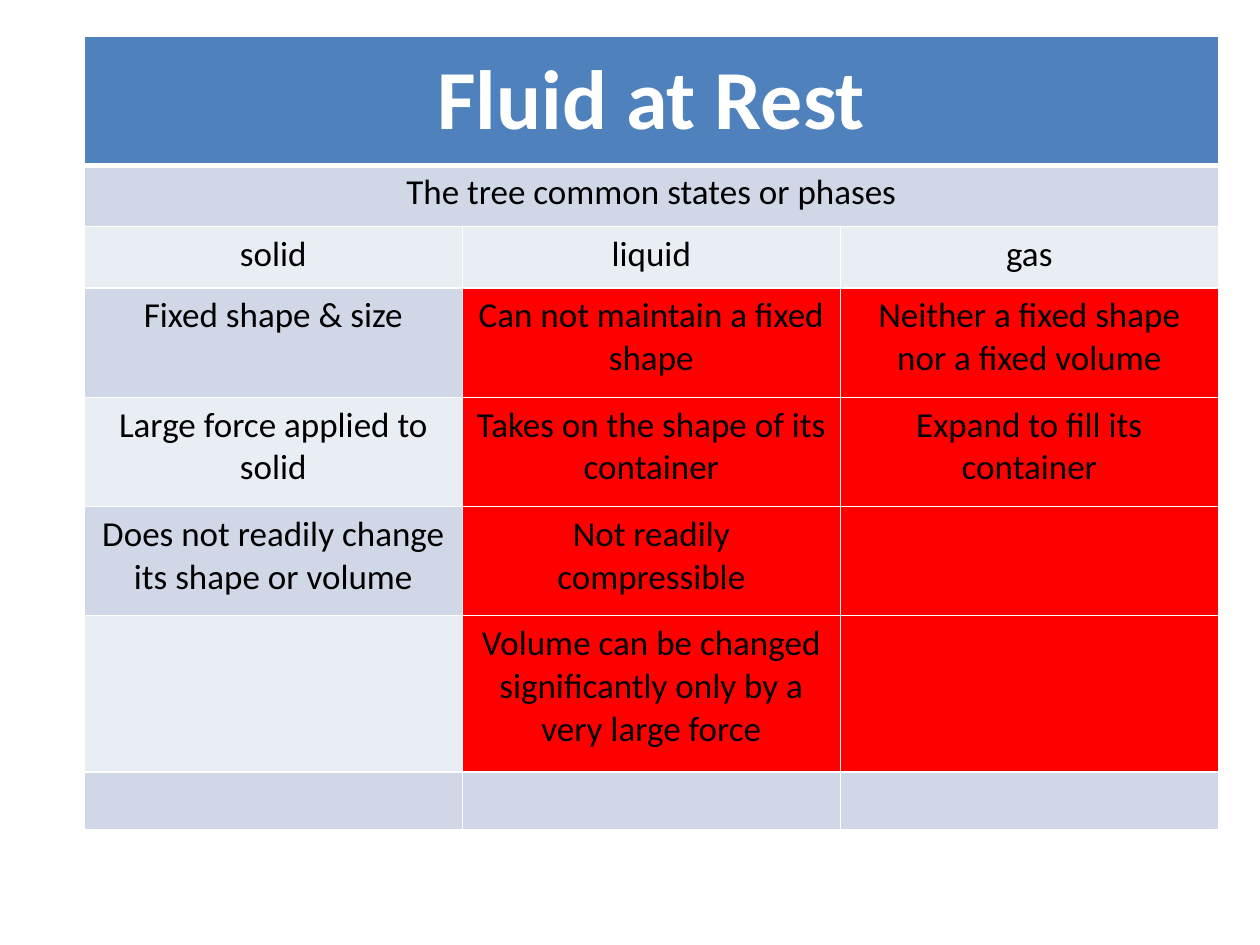
from lxml import etree
from pptx import Presentation
from pptx.dml.color import RGBColor
from pptx.enum.text import MSO_ANCHOR, PP_ALIGN
from pptx.oxml.ns import qn
from pptx.util import Cm, Pt

CENTER = PP_ALIGN.CENTER
MIDDLE, TOP = MSO_ANCHOR.MIDDLE, MSO_ANCHOR.TOP
BLANK = 6

HEAD = "Fluid at Rest"
INTRO = "The tree common states or phases"
STATES = [
    ("solid", "liquid", "gas"),
    ("Fixed shape & size", "Can not maintain a fixed shape",
     "Neither a fixed shape nor a fixed volume"),
    ("Large force applied to solid", "Takes on the shape of its container",
     "Expand to fill its container"),
    ("Does not readily change its shape or volume",
     "Not readily compressible", ""),
    ("", "Volume can be changed significantly only by a very large force", ""),
    ("", "", ""),
]
ROWS = [(HEAD, "", ""), (INTRO, "", "")] + STATES
HEIGHTS = [2.59, 1.24, 1.24, 2.2, 2.2, 2.2, 3.15, 1.17]
WIDTH = 22.86


def color(text):
    return RGBColor.from_string(text)


class Deck:
    font = "Calibri"
    blue, dark, light, red = "4F81BD", "D0D8E8", "E9EDF4", "FF0000"
    white, black = "FFFFFF", "000000"

    def __init__(self):
        self.prs = Presentation()
        self.prs.slide_width, self.prs.slide_height = Cm(25.4), Cm(19.05)
        self.slide = self.prs.slides.add_slide(self.prs.slide_layouts[BLANK])

    def border(self, cell, side, width):
        props = cell._tc.get_or_add_tcPr()
        line = etree.SubElement(props, qn("a:ln" + side), w=str(Pt(width)))
        fill = etree.SubElement(line, qn("a:solidFill"))
        etree.SubElement(fill, qn("a:srgbClr"), val=self.white)

    def cell(self, cell, text, fill, head, widths):
        for side in "LRTB":
            self.border(cell, side, widths.get(side, 1))
        cell.fill.solid()
        cell.fill.fore_color.rgb = color(fill)
        cell.vertical_anchor = MIDDLE if head else TOP
        if not text:
            return
        cell.text_frame.text = text
        para = cell.text_frame.paragraphs[0]
        para.alignment = CENTER
        font = para.runs[0].font
        font.name, font.bold = self.font, head
        font.size = Pt(48 if head else 20)
        font.color.rgb = color(self.white if head else self.black)

    def table(self, rows, heights, left, top, width):
        count = len(rows[0])
        grid = self.slide.shapes.add_table(
            len(rows), count, Cm(left), Cm(top), Cm(width), Cm(sum(heights))
        ).table
        for col in grid.columns:
            col.width = Cm(width / count)
        for r, texts in enumerate(rows):
            grid.rows[r].height = Cm(heights[r])
            # A thick rule parts the heading from the body
            widths = {0: {"B": 3}, 1: {"T": 3}}.get(r, {})
            for c, text in enumerate(texts):
                self.cell(grid.cell(r, c), text, self.shade(r, c),
                          r == 0, widths)
        # The heading and intro run across all columns
        for r in (0, 1):
            grid.cell(r, 0).merge(grid.cell(r, count - 1))

    def shade(self, r, c):
        if r == 0:
            return self.blue
        if c > 0 and 3 <= r <= 6:
            return self.red
        return self.dark if r % 2 else self.light


def main():
    deck = Deck()
    deck.table(ROWS, HEIGHTS, 1.7, 0.74, WIDTH)
    deck.prs.save("out.pptx")


if __name__ == "__main__":
    main()
